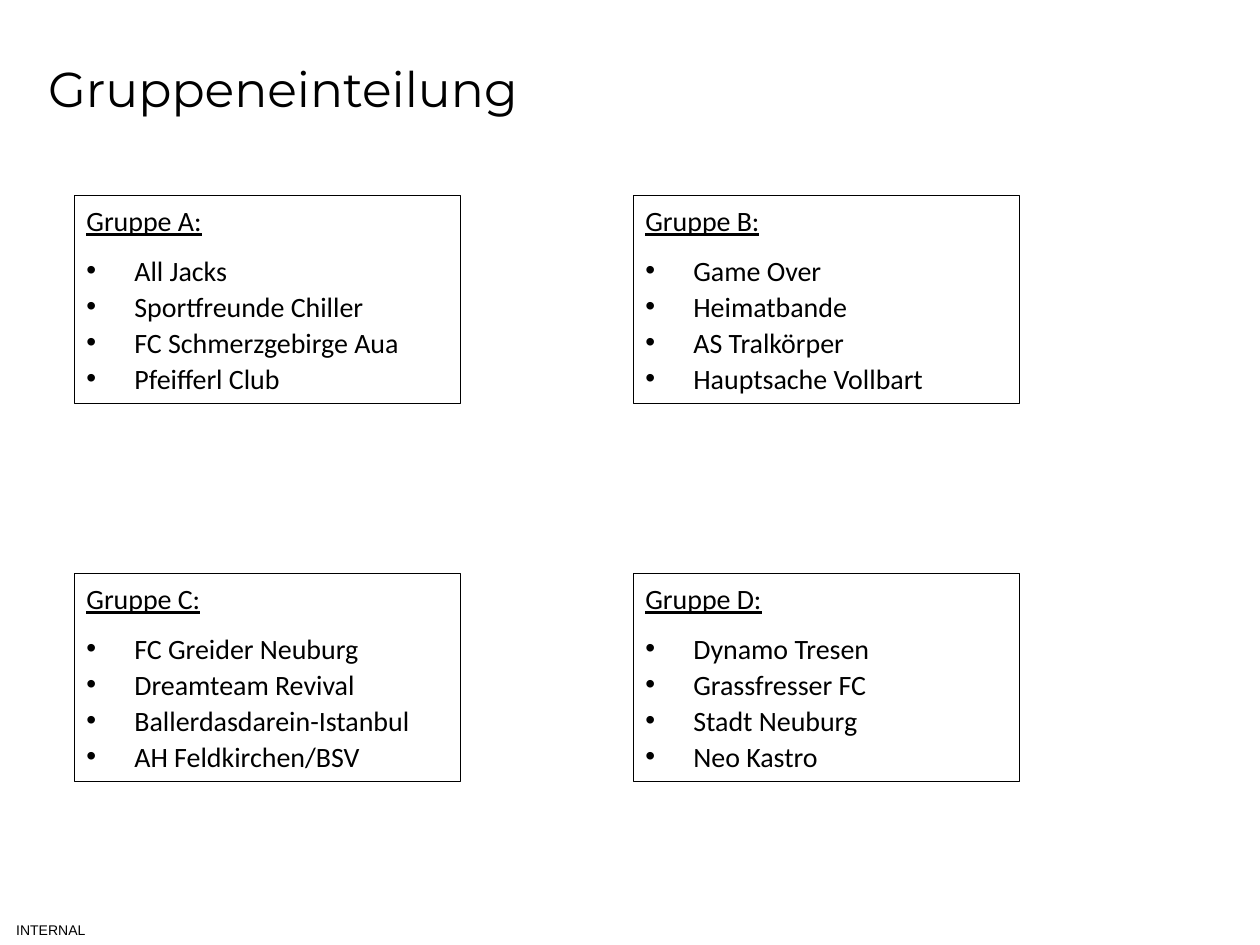
import pptx
import pptx.dml.color
import pptx.enum.shapes
import pptx.enum.text
import pptx.oxml
import pptx.oxml.ns
import pptx.util

EMU_PER_PX = 914400 / 126
COLORS = {"text": "000000", "border": "000000", "card": "FFFFFF"}
GROUPS = {
    "Gruppe A:": ["All Jacks", "Sportfreunde Chiller", "FC Schmerzgebirge Aua", "Pfeifferl Club"],
    "Gruppe B:": ["Game Over", "Heimatbande", "AS Tralkörper", "Hauptsache Vollbart"],
    "Gruppe C:": ["FC Greider Neuburg", "Dreamteam Revival", "Ballerdasdarein-Istanbul", "AH Feldkirchen/BSV"],
    "Gruppe D:": ["Dynamo Tresen", "Grassfresser FC", "Stadt Neuburg", "Neo Kastro"],
}


def px(length):
    """Turn pixels into EMU."""
    return pptx.util.Emu(round(length * EMU_PER_PX))


def color(name):
    """Look up a palette colour."""
    return pptx.dml.color.RGBColor.from_string(COLORS[name])


def add_run(paragraph, text, font, size, underline=None):
    """Append one styled run to a paragraph."""
    run = paragraph.add_run()
    run.text = text
    run.font.name = font
    run.font.size = pptx.util.Pt(size)
    run.font.underline = underline
    run.font.color.rgb = color("text")


def add_bullet(paragraph, indent):
    """Give a paragraph a hanging bullet."""
    properties = paragraph._p.get_or_add_pPr()
    properties.set("marL", str(px(indent)))
    properties.set("indent", str(-px(indent)))
    namespace = pptx.oxml.ns.nsdecls("a")
    properties.append(pptx.oxml.parse_xml(f'<a:buFont {namespace} typeface="Arial"/>'))
    properties.append(pptx.oxml.parse_xml(f'<a:buChar {namespace} char="•"/>'))


def add_label(slide, box, text, font, size, inset, align):
    """Place one line of text, vertically centred in its box."""
    frame = slide.shapes.add_textbox(*map(px, box)).text_frame
    frame.word_wrap = True
    frame.vertical_anchor = pptx.enum.text.MSO_ANCHOR.MIDDLE
    frame.margin_left = frame.margin_right = px(inset)
    frame.margin_top = frame.margin_bottom = 0
    frame.paragraphs[0].alignment = align
    add_run(frame.paragraphs[0], text, font, size)


def add_group(slide, box, heading, teams):
    """Place one framed group with its heading and bulleted teams."""
    card = slide.shapes.add_shape(pptx.enum.shapes.MSO_SHAPE.RECTANGLE, *map(px, box))
    card.shadow.inherit = False
    card.fill.solid()
    card.fill.fore_color.rgb = color("card")
    card.line.color.rgb = color("border")
    card.line.width = pptx.util.Pt(0.5)
    frame = card.text_frame
    frame.word_wrap = True
    frame.vertical_anchor = pptx.enum.text.MSO_ANCHOR.TOP
    for index, line in enumerate([heading, *teams]):
        paragraph = frame.add_paragraph() if index else frame.paragraphs[0]
        paragraph.alignment = pptx.enum.text.PP_ALIGN.LEFT
        paragraph.line_spacing = 1.07
        paragraph.space_after = pptx.util.Pt(8 if index in (0, len(teams)) else 0)
        if index:
            add_bullet(paragraph, 48)
        add_run(paragraph, line, "Calibri", 16, underline=index == 0)


def add_groups(slide, box, card_size):
    """Spread the groups over the corners of a two by two grid."""
    left, top, width, height = box
    card_width, card_height = card_size
    for index, (heading, teams) in enumerate(GROUPS.items()):
        row, column = divmod(index, 2)
        x = left + column * (width - card_width)
        y = top + row * (height - card_height)
        add_group(slide, (x, y, card_width, card_height), heading, teams)


def main():
    """Build and save the slide."""
    deck = pptx.Presentation()
    deck.slide_width, deck.slide_height = px(1260), px(945)
    slide = deck.slides.add_slide(deck.slide_layouts[6])
    align = pptx.enum.text.PP_ALIGN
    add_label(slide, (0, 915, 102, 30), "INTERNAL", "Arial", 8, 0, align.CENTER)
    add_label(slide, (35, 1, 992, 173), "Gruppeneinteilung", "Montserrat", 28, 13, align.LEFT)
    add_groups(slide, (74, 195, 946, 586), (387, 208))
    deck.save("out.pptx")


if __name__ == "__main__":
    main()
